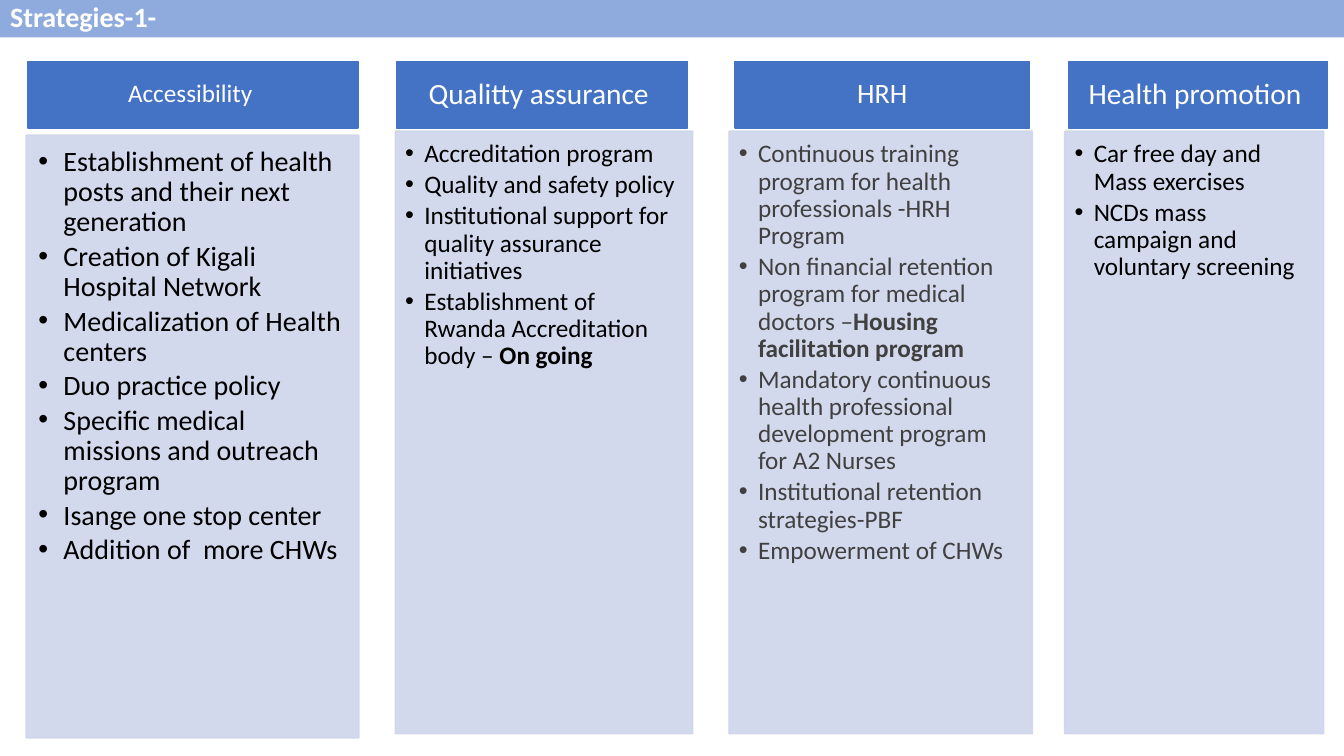
from lxml import etree
from pptx import Presentation
from pptx.dml.color import RGBColor
from pptx.enum.shapes import MSO_SHAPE
from pptx.enum.text import MSO_ANCHOR, MSO_AUTO_SIZE, PP_ALIGN
from pptx.oxml.ns import qn
from pptx.util import Inches, Pt

RECTANGLE = MSO_SHAPE.RECTANGLE
TOP, MIDDLE = MSO_ANCHOR.TOP, MSO_ANCHOR.MIDDLE
LEFT, CENTER = PP_ALIGN.LEFT, PP_ALIGN.CENTER
NO_AUTOFIT = MSO_AUTO_SIZE.NONE

FONT = "Calibri"
TITLE_BLUE, HEADER_BLUE, PANEL_BLUE = "8FAADC", "4472C4", "CFD5EA"
WHITE, BLACK, GREY = "FFFFFF", "000000", "404040"
HEADER_TOP, HEADER_HEIGHT, PANEL_HEIGHT = 0.61, 0.66, 5.98

# Format of the text in the panels
LARGE = {"size": 20, "indent": 0.25, "insets": (0.12, 0.12, 0.16, 0.17)}
SMALL = {"size": 18, "indent": 0.19, "insets": (0.1, 0.1, 0.14, 0.16)}

# A bullet is a list of runs; every second run is bold.
COLUMNS = [
    {"header": ("Accessibility ", 18, 0.28, 3.27), "panel": (0.26, 1.34, 3.3),
     "format": {**LARGE, "color": BLACK},
     "bullets": [["Establishment of health posts and their next generation"],
                 ["Creation of Kigali Hospital Network"],
                 ["Medicalization of Health centers"],
                 ["Duo practice policy"],
                 ["Specific medical missions and outreach program"],
                 ["Isange one stop center"],
                 ["Addition of  more CHWs"]]},
    {"header": ("Qualitty assurance ", 21, 3.93, 2.89), "panel": (3.92, 1.3, 2.95),
     "format": {**SMALL, "color": BLACK},
     "bullets": [["Accreditation program"],
                 ["Quality and safety policy"],
                 ["Institutional support for quality assurance initiatives"],
                 ["Establishment of Rwanda Accreditation body – ", "On going"]]},
    {"header": ("HRH", 20, 7.29, 2.92), "panel": (7.23, 1.3, 3.01),
     "format": {**SMALL, "color": GREY},
     "bullets": [["Continuous training program for health professionals -HRH Program"],
                 ["Non financial retention program for medical doctors –",
                  "Housing facilitation program"],
                 ["Mandatory continuous health professional development program "
                  "for A2 Nurses"],
                 ["Institutional retention strategies-PBF"],
                 ["Empowerment of CHWs"]]},
    {"header": ("Health promotion ", 21, 10.6, 2.57), "panel": (10.56, 1.3, 2.57),
     "format": {**SMALL, "color": BLACK},
     "bullets": [["Car free day and Mass exercises"],
                 ["NCDs mass campaign and voluntary screening"]]},
]


def rgb(value):
    return RGBColor.from_string(value)


def set_fill(shape, color):
    shape.fill.solid()
    shape.fill.fore_color.rgb = rgb(color)


def set_opacity(shape, percent):
    for color in shape._element.spPr.iter(qn("a:srgbClr")):
        etree.SubElement(color, qn("a:alpha"), val=str(percent * 1000))


def add_bullet(paragraph, indent):
    paragraph.level = 1
    properties = paragraph._p.get_or_add_pPr()
    properties.set("marL", str(Inches(indent)))
    properties.set("indent", str(-Inches(indent)))
    etree.SubElement(properties, qn("a:buFont"), typeface="Arial")
    etree.SubElement(properties, qn("a:buChar"), char="•")


def write_text(shape, paragraphs, *, size, color, bold=False, align=LEFT, anchor=TOP,
               insets=(0.1, 0.05, 0.1, 0.05), spacing=0.9, after=0, indent=None):
    frame = shape.text_frame
    frame.word_wrap = True
    frame.auto_size = NO_AUTOFIT
    frame.vertical_anchor = anchor
    (frame.margin_left, frame.margin_top,
     frame.margin_right, frame.margin_bottom) = map(Inches, insets)
    for index, runs in enumerate(paragraphs):
        paragraph = frame.add_paragraph() if index else frame.paragraphs[0]
        paragraph.alignment = align
        paragraph.line_spacing = spacing
        paragraph.space_before = Pt(0)
        paragraph.space_after = Pt(after)
        if indent:
            add_bullet(paragraph, indent)
        for position, text in enumerate(runs):
            run = paragraph.add_run()
            run.text = text
            run.font.name = FONT
            run.font.size = Pt(size)
            run.font.bold = bold or position % 2 == 1
            run.font.color.rgb = rgb(color)


def add_box(slide, left, top, width, height, color):
    shape = slide.shapes.add_shape(RECTANGLE, Inches(left), Inches(top),
                                   Inches(width), Inches(height))
    shape.shadow.inherit = False
    set_fill(shape, color)
    shape.line.color.rgb = rgb(color)
    shape.line.width = Pt(1)
    return shape


def add_title(slide, text):
    title = slide.shapes.title
    title.left, title.top = Inches(0), Inches(-0.08)
    title.width, title.height = Inches(13.33), Inches(0.45)
    set_fill(title, TITLE_BLUE)
    write_text(title, [[text]], size=20, color=WHITE, bold=True, spacing=1.07)


def add_column(slide, column):
    # Header
    text, size, left, width = column["header"]
    header = add_box(slide, left, HEADER_TOP, width, HEADER_HEIGHT, HEADER_BLUE)
    write_text(header, [[text]], size=size, color=WHITE, align=CENTER, anchor=MIDDLE,
               insets=(0.16, 0.09, 0.16, 0.09))

    # Panel with bullets
    left, top, width = column["panel"]
    panel = add_box(slide, left, top, width, PANEL_HEIGHT, PANEL_BLUE)
    set_opacity(panel, 90)
    text_format = column["format"]
    write_text(panel, column["bullets"], after=0.15 * text_format["size"], **text_format)


def main():
    presentation = Presentation()
    presentation.slide_width = Inches(13.33)
    presentation.slide_height = Inches(7.5)
    slide = presentation.slides.add_slide(presentation.slide_layouts[5])
    add_title(slide, "Strategies-1-")
    for column in COLUMNS:
        add_column(slide, column)
    presentation.save("out.pptx")


if __name__ == "__main__":
    main()
